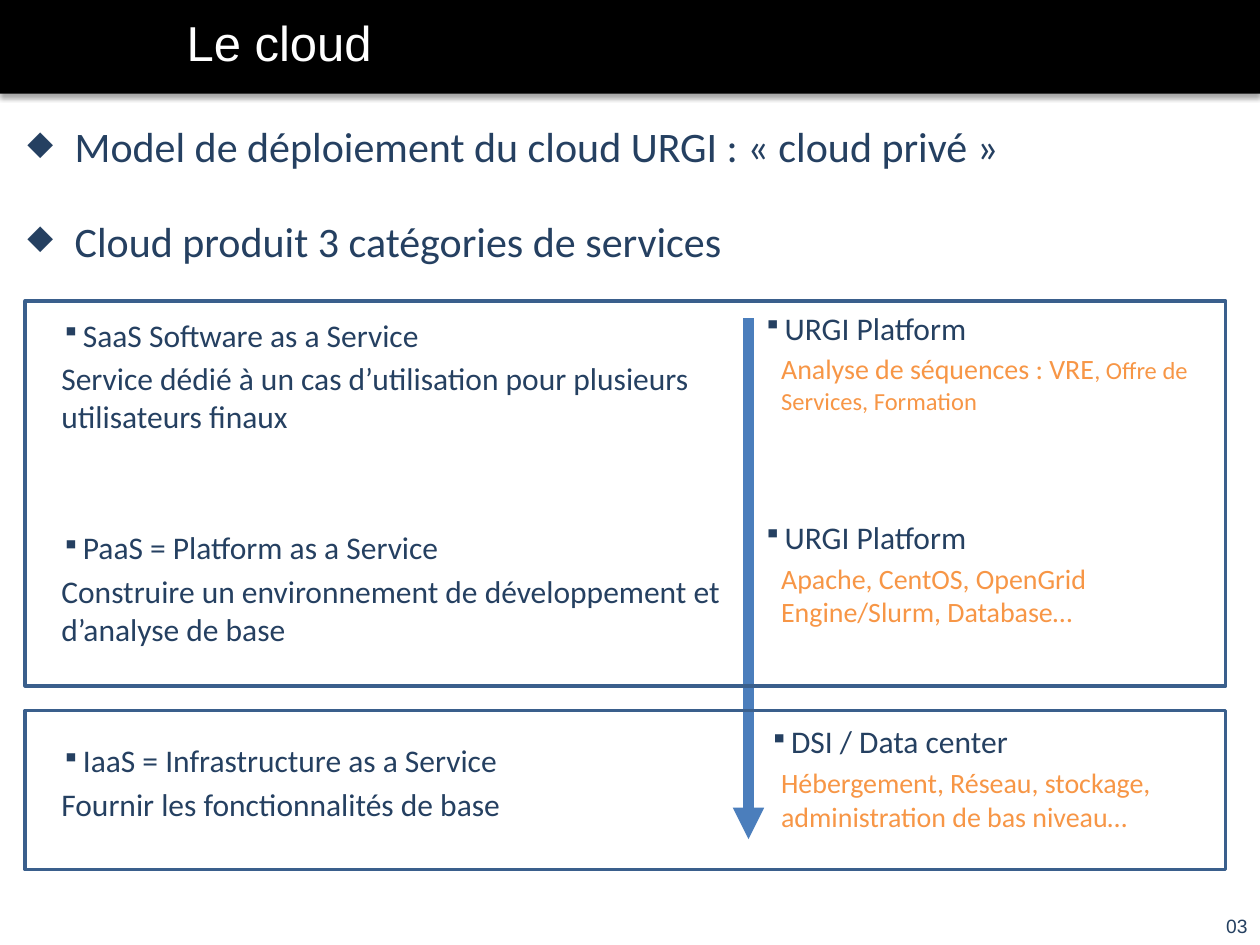
from lxml import etree
from pptx import Presentation
from pptx.dml.color import RGBColor
from pptx.enum.shapes import MSO_CONNECTOR, MSO_SHAPE
from pptx.enum.text import MSO_ANCHOR, PP_ALIGN
from pptx.oxml.ns import qn
from pptx.util import Pt

STRAIGHT, RECTANGLE = MSO_CONNECTOR.STRAIGHT, MSO_SHAPE.RECTANGLE
TOP, MIDDLE = MSO_ANCHOR.TOP, MSO_ANCHOR.MIDDLE
LEFT, RIGHT = PP_ALIGN.LEFT, PP_ALIGN.RIGHT

NAVY, ORANGE, WHITE, BLACK = "254061", "F79646", "FFFFFF", "000000"
FRAME_BLUE, ARROW_BLUE = "3A5F8C", "4B7EBC"
LINE_GAP = 3.2

TITLE = "Le cloud"
PAGE_NUMBER = "03"
DEPLOYMENT = "Model de déploiement du cloud URGI : « cloud privé »"
CATEGORIES = "Cloud produit 3 catégories de services"
SERVICES = [
    ("SaaS Software as a Service",
     "Service dédié à un cas d’utilisation pour plusieurs utilisateurs finaux", 28.5),
    ("PaaS = Platform as a Service",
     "Construire un environnement de développement et d’analyse de base", 53.6),
    ("IaaS = Infrastructure as a Service", "Fournir les fonctionnalités de base", 53.6),
]
PROVIDERS = [
    ("URGI Platform", [("Analyse de séquences : VRE", 16), (", Offre de Services, Formation", 14)], 0, 28),
    ("URGI Platform", [("Apache, CentOS, OpenGrid Engine/Slurm, Database…", 16)], 58.8, 28),
    ("DSI / Data center", [("Hébergement, Réseau, stockage, administration de bas niveau…", 16)], 53.6, 31.7),
]
FRAMES = [(14.4, 406, 686, 91), (14.4, 172, 686, 220)]


def rgb(value):
    """Turn a hex string into a colour."""
    return RGBColor.from_string(value)


def add_box(page, left, top, width, height):
    """Add a wrapping text box."""
    box = page.shapes.add_textbox(Pt(left), Pt(top), Pt(width), Pt(height))
    box.text_frame.word_wrap = True
    return box


def write(box, spans, font="Calibri", color=NAVY, align=LEFT, before=0, margin=0, indent=0,
          bullet=None, spacing=None):
    """Append a paragraph of (text, size) spans to a shape."""
    frame = box.text_frame
    para = frame.paragraphs[0] if not frame.text else frame.add_paragraph()
    para.alignment = align
    if before:
        para.space_before = Pt(before)
    if spacing:
        para.line_spacing = spacing
    properties = para._p.get_or_add_pPr()
    properties.set("marL", str(Pt(margin)))
    properties.set("indent", str(Pt(indent)))
    if bullet:
        etree.SubElement(properties, qn("a:buSzPct")).set("val", "80000")
        etree.SubElement(properties, qn("a:buChar")).set("char", bullet)
    for text, size in spans:
        span = para.add_run()
        span.text = text
        span.font.name, span.font.size = font, Pt(size)
        span.font.color.rgb = rgb(color)


def write_heading(box, text):
    """Write a first-level bullet."""
    write(box, [(text, 24)], margin=27, indent=-27, bullet="◆")


def write_item(box, text, before, margin):
    """Write a second-level bullet."""
    write(box, [(text, 18)], before=before, margin=margin, indent=-12.2, bullet="▪")


def add_rectangle(page, left, top, width, height, fill=None, line=None):
    """Add a plain rectangle."""
    shape = page.shapes.add_shape(RECTANGLE, Pt(left), Pt(top), Pt(width), Pt(height))
    shape.shadow.inherit = False
    if fill:
        shape.fill.solid()
        shape.fill.fore_color.rgb = rgb(fill)
    else:
        shape.fill.background()
    if line:
        shape.line.color.rgb = rgb(line)
        shape.line.width = Pt(2)
    else:
        shape.line.fill.background()
    return shape


def add_banner(page):
    """Add the shadowed title band behind everything else."""
    banner = add_rectangle(page, 0, 0, 720, 53.5, fill=BLACK)
    effects = banner._element.spPr.find(qn("a:effectLst"))
    shadow = etree.SubElement(effects, qn("a:outerShdw"), blurRad=str(Pt(3.1)),
                              dist=str(Pt(1.8)), dir="5400000", rotWithShape="0")
    color = etree.SubElement(shadow, qn("a:srgbClr"), val=BLACK)
    etree.SubElement(color, qn("a:alpha"), val="35000")
    page.shapes._spTree.insert(2, banner._element)


def add_arrow(page, x, top, bottom):
    """Add the thick downward arrow."""
    arrow = page.shapes.add_connector(STRAIGHT, Pt(x), Pt(top), Pt(x), Pt(bottom))
    arrow.line.color.rgb = rgb(ARROW_BLUE)
    arrow.line.width = Pt(6)
    etree.SubElement(arrow.line._get_or_add_ln(), qn("a:tailEnd"), type="triangle")
    etree.SubElement(arrow._element.spPr, qn("a:effectLst"))


def main():
    """Build the slide."""
    deck = Presentation()
    deck.slide_width, deck.slide_height = Pt(720), Pt(540)
    page = deck.slides.add_slide(deck.slide_layouts[5])
    add_banner(page)

    title = page.shapes.title
    title.left, title.top, title.width, title.height = Pt(99.4), Pt(10), Pt(516), Pt(34)
    title.text_frame.vertical_anchor = MIDDLE
    write(title, [(TITLE, 28)], font="Arial", color=WHITE, spacing=0.8)

    services = add_box(page, 8.6, 119.5, 442, 421)
    write_heading(services, CATEGORIES)
    for name, purpose, before in SERVICES:
        write_item(services, name, before, 31.7)
        write(services, [(purpose, 18)], before=LINE_GAP, margin=19.4)

    number = add_box(page, 683.3, 519, 36.7, 21)
    write(number, [(PAGE_NUMBER, 11)], font="Arial", align=RIGHT)

    add_arrow(page, 427.7, 182, 479.5)

    providers = add_box(page, 413.3, 172.8, 309, 318)
    for name, spans, before, margin in PROVIDERS:
        write_item(providers, name, before, margin)
        write(providers, spans, color=ORANGE, before=LINE_GAP, margin=26)

    deployment = add_box(page, 8.6, 65.5, 607, 39.6)
    write_heading(deployment, DEPLOYMENT)

    for box in (services, providers, deployment):
        box.text_frame.vertical_anchor = TOP
    for frame in FRAMES:
        add_rectangle(page, *frame, line=FRAME_BLUE)

    deck.save("out.pptx")


if __name__ == "__main__":
    main()
